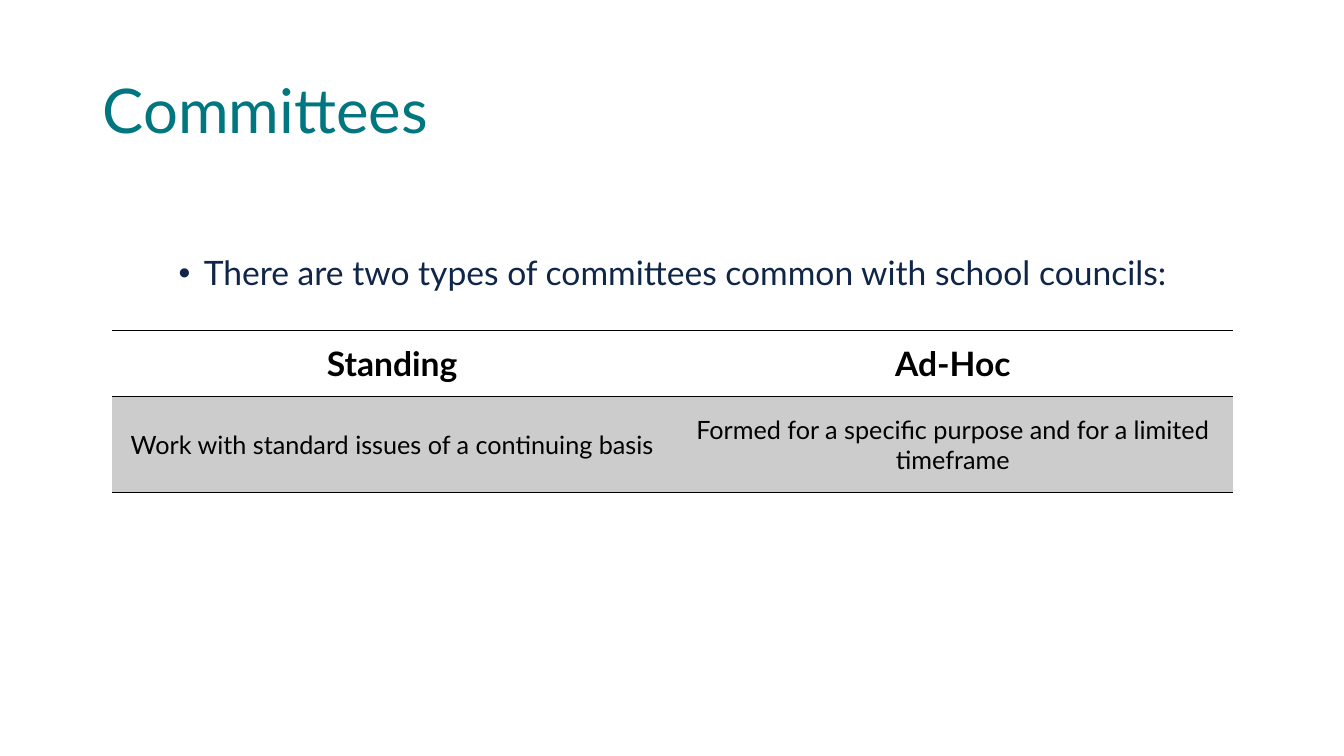
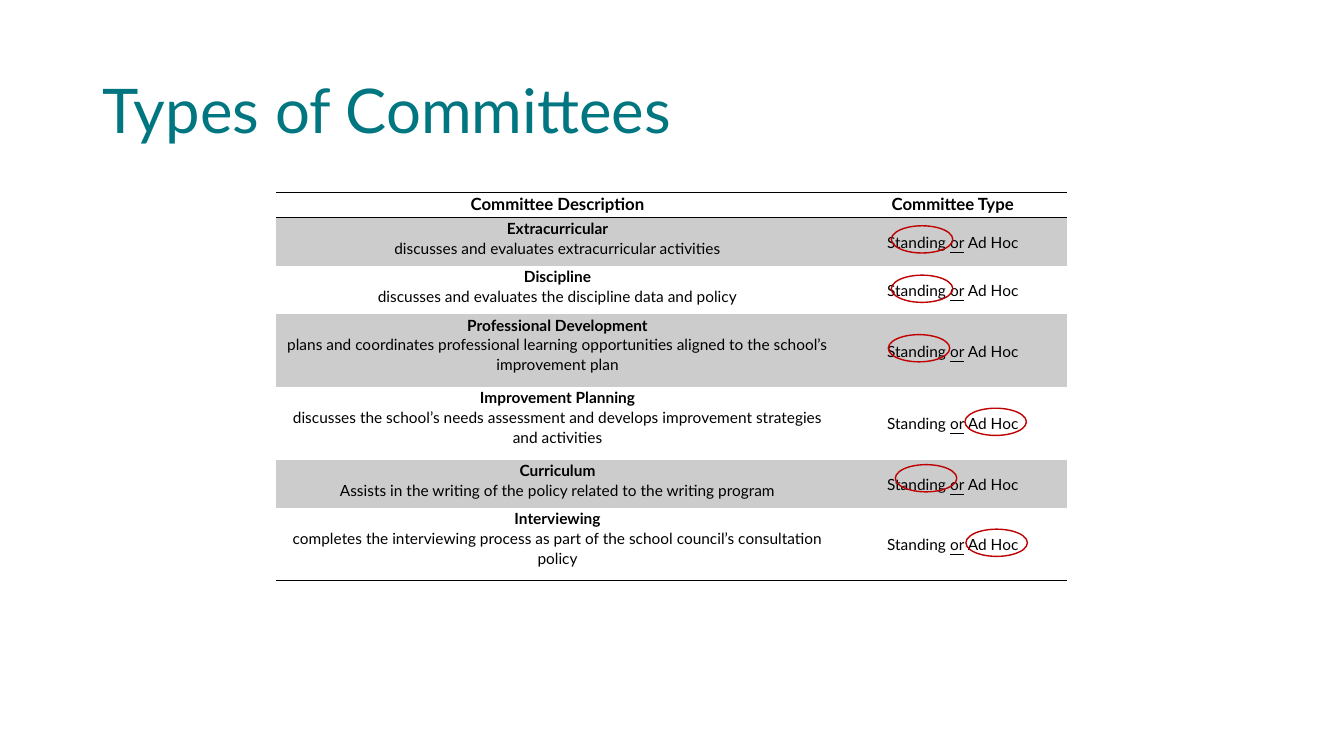
from lxml.etree import SubElement
from pptx import Presentation
from pptx.dml.color import RGBColor
from pptx.enum.shapes import MSO_SHAPE
from pptx.enum.text import MSO_ANCHOR, PP_ALIGN
from pptx.oxml.ns import qn
from pptx.util import Inches, Pt

FONT = "Lato"
TEAL, NAVY, BLACK, GREY, RED = "007780", "102649", "000000", "CCCCCC", "C00000"
TITLE_ONLY = 5

COMMITTEES = [
    ("Extracurricular", "discusses and evaluates extracurricular activities", 0.48),
    ("Discipline", "discusses and evaluates the discipline data and policy", 0.48),
    ("Professional Development",
     "plans and coordinates professional learning opportunities aligned to the school’s improvement plan", 0.72),
    ("Improvement Planning",
     "discusses the school’s needs assessment and develops improvement strategies and activities", 0.72),
    ("Curriculum", "Assists in the writing of the policy related to the writing program", 0.48),
    ("Interviewing",
     "completes the interviewing process as part of the school council’s consultation policy", 0.72),
]
ANSWER_RINGS = [(8.84, 2.24), (8.84, 2.73), (8.81, 3.32), (9.57, 4.05), (8.88, 4.61), (9.58, 5.25)]


def rgb(color):
    return RGBColor.from_string(color)


def style_font(font, size, color=BLACK, bold=False):
    font.name = FONT
    font.size = Pt(size)
    font.bold = bold
    font.color.rgb = rgb(color)


def style_paragraph(paragraph, size, color=BLACK, bold=False, align=PP_ALIGN.CENTER, spacing=1.0):
    paragraph.alignment = align
    paragraph.line_spacing = spacing
    for run in paragraph.runs:
        style_font(run.font, size, color, bold)


def add_titled_slide(deck, heading):
    slide = deck.slides.add_slide(deck.slide_layouts[TITLE_ONLY])
    title = slide.shapes.title
    title.left, title.top = Inches(0.92), Inches(0.4)
    title.width, title.height = Inches(11.5), Inches(1.45)
    title.text_frame.text = heading
    title.text_frame.vertical_anchor = MSO_ANCHOR.MIDDLE
    style_paragraph(title.text_frame.paragraphs[0], 44, TEAL, align=PP_ALIGN.LEFT, spacing=0.9)
    return slide


def add_bullet(slide, left, top, width, height, text):
    frame = slide.shapes.add_textbox(Inches(left), Inches(top), Inches(width), Inches(height)).text_frame
    frame.word_wrap = True
    frame.text = text
    paragraph = frame.paragraphs[0]
    properties = paragraph._p.get_or_add_pPr()
    properties.set("marL", str(Inches(0.25)))
    properties.set("indent", str(Inches(-0.25)))
    SubElement(properties, qn("a:buFont"), typeface="Arial")
    SubElement(properties, qn("a:buChar"), char="•")
    style_paragraph(paragraph, 24, NAVY, spacing=0.9)


def add_border(cell, side, ruled):
    border = SubElement(cell._tc.get_or_add_tcPr(), qn(f"a:ln{side}"), w=str(Pt(1)))
    if ruled:
        fill = SubElement(border, qn("a:solidFill"))
        SubElement(fill, qn("a:srgbClr"), val=BLACK)
    else:
        SubElement(border, qn("a:noFill"))


def add_ruled_table(slide, left, top, widths, heights):
    table = slide.shapes.add_table(len(heights), len(widths), Inches(left), Inches(top),
                                   Inches(sum(widths)), Inches(sum(heights))).table
    table.first_row = table.horz_banding = False
    for column, width in zip(table.columns, widths):
        column.width = Inches(width)
    rules = {0, 1, len(heights)}
    for index, (row, height) in enumerate(zip(table.rows, heights)):
        row.height = Inches(height)
        for cell in row.cells:
            for side, ruled in (("L", False), ("R", False), ("T", index in rules), ("B", index + 1 in rules)):
                add_border(cell, side, ruled)
            if index % 2:
                cell.fill.solid()
                cell.fill.fore_color.rgb = rgb(GREY)
            else:
                cell.fill.background()
            cell.vertical_anchor = MSO_ANCHOR.MIDDLE
    return table


def fill_cell(cell, lines, size, bold_first=False, spacing=1.0):
    cell.text_frame.text = "\n".join(lines)
    for index, paragraph in enumerate(cell.text_frame.paragraphs):
        style_paragraph(paragraph, size, bold=bold_first and index == 0, spacing=spacing)


def fill_choice(cell):
    paragraph = cell.text_frame.paragraphs[0]
    for text in ("Standing ", "or", " Ad Hoc"):
        run = paragraph.add_run()
        run.text = text
        run.font.underline = text == "or"
    style_paragraph(paragraph, 11, spacing=1.07)


def add_ring(slide, left, top):
    ring = slide.shapes.add_shape(MSO_SHAPE.OVAL, Inches(left), Inches(top), Inches(0.61), Inches(0.27))
    ring.shadow.inherit = False
    ring.fill.background()
    ring.line.color.rgb = rgb(RED)
    ring.line.width = Pt(1)


def build_committees(deck):
    slide = add_titled_slide(deck, "Committees")
    add_bullet(slide, 0.92, 2.5, 11.5, 0.5, "There are two types of committees common with school councils:")
    table = add_ruled_table(slide, 1.11, 3.28, [5.56, 5.56], [0.65, 0.96])
    columns = [
        ("Standing", "Work with standard issues of a continuing basis"),
        ("Ad-Hoc", "Formed for a specific purpose and for a limited timeframe"),
    ]
    for index, (kind, purpose) in enumerate(columns):
        fill_cell(table.cell(0, index), [kind], 24, bold_first=True)
        fill_cell(table.cell(1, index), [purpose], 18)


def build_committee_types(deck):
    slide = add_titled_slide(deck, "Types of Committees")
    heights = [0.25] + [height for _, _, height in COMMITTEES]
    table = add_ruled_table(slide, 2.74, 1.91, [5.58, 2.26], heights)
    for cell in table.iter_cells():
        cell.margin_left = cell.margin_right = Inches(0.07)
        cell.margin_top = cell.margin_bottom = 0
    for index, header in enumerate(("Committee Description", "Committee Type")):
        fill_cell(table.cell(0, index), [header], 12, bold_first=True, spacing=1.07)
        table.cell(0, index).vertical_anchor = MSO_ANCHOR.TOP
    for index, (committee, duty, _) in enumerate(COMMITTEES, start=1):
        description = table.cell(index, 0)
        fill_cell(description, [committee, duty], 11, bold_first=True, spacing=1.07)
        description.vertical_anchor = MSO_ANCHOR.TOP
        fill_choice(table.cell(index, 1))
    for left, top in ANSWER_RINGS:
        add_ring(slide, left, top)


def main():
    deck = Presentation()
    deck.slide_width, deck.slide_height = Inches(13.33), Inches(7.5)
    build_committees(deck)
    build_committee_types(deck)
    deck.save("out.pptx")


if __name__ == "__main__":
    main()
